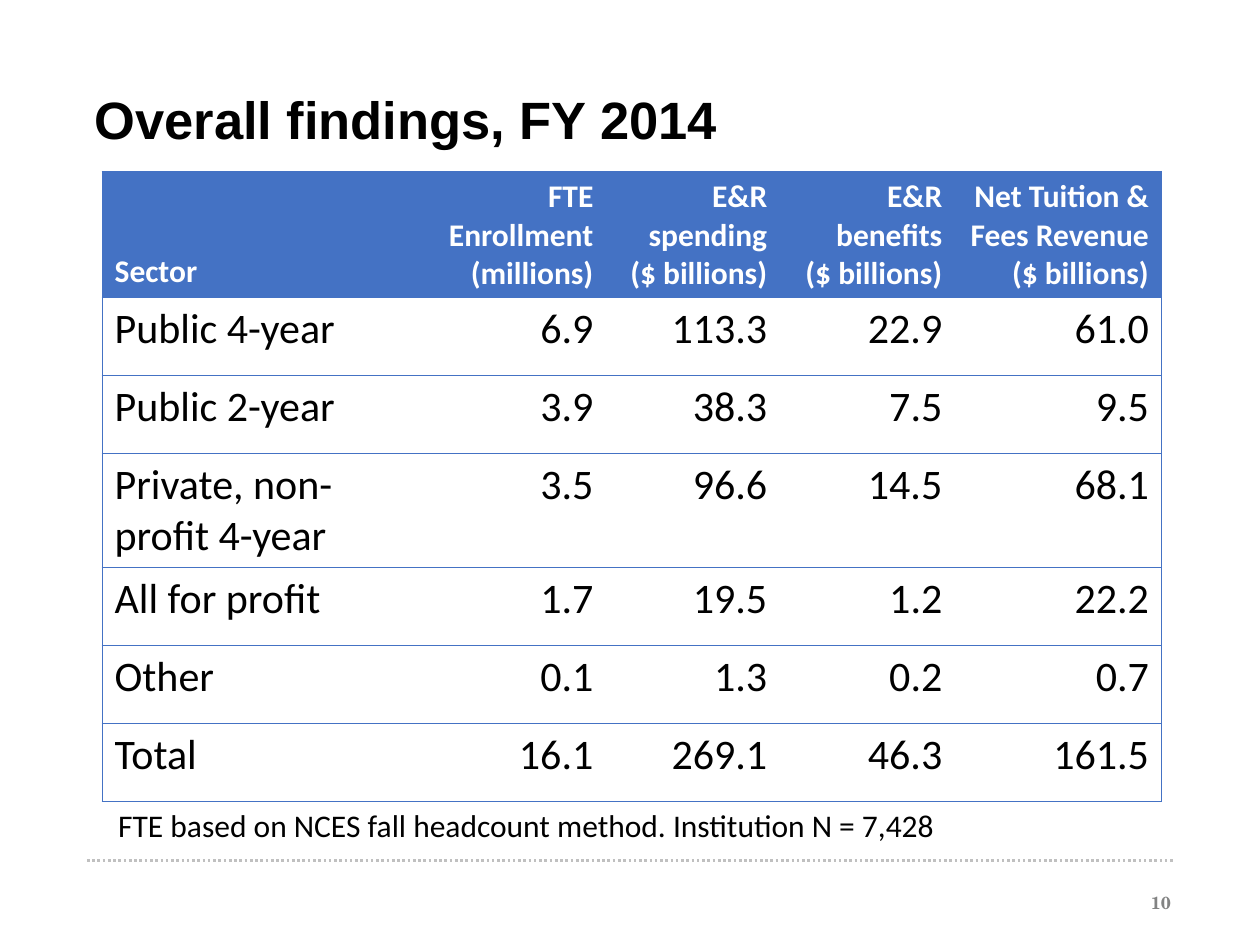
from lxml.etree import SubElement
from pptx import Presentation
from pptx.dml.color import RGBColor
from pptx.enum.dml import MSO_LINE_DASH_STYLE as Dash
from pptx.enum.shapes import MSO_CONNECTOR as Connector
from pptx.enum.text import MSO_ANCHOR as Anchor, MSO_AUTO_SIZE as AutoSize, PP_ALIGN as Align
from pptx.oxml import parse_xml
from pptx.oxml.ns import nsdecls, qn
from pptx.util import Inches, Pt

BLACK = RGBColor(0x00, 0x00, 0x00)
WHITE = RGBColor(0xFF, 0xFF, 0xFF)
BLUE = RGBColor(0x44, 0x72, 0xC4)
GREY = RGBColor(0x82, 0x83, 0x83)
RULE_GREY = RGBColor(0xC0, 0xC0, 0xC0)

COLUMN_WIDTHS = [2.48, 1.52, 1.38, 1.39, 1.64]
ROW_HEIGHTS = [0.99, 0.62, 0.62, 0.69, 0.62, 0.62, 0.62]
FINDINGS = [
    ["Sector", "FTE Enrollment (millions)", "E&R spending\n($ billions)",
     "E&R benefits\n($ billions)", "Net Tuition & Fees Revenue ($ billions)"],
    ["Public 4-year", "6.9", "113.3", "22.9", "61.0"],
    ["Public 2-year", "3.9", "38.3", "7.5", "9.5"],
    ["Private, non-profit 4-year", "3.5", "96.6", "14.5", "68.1"],
    ["All for profit", "1.7", "19.5", "1.2", "22.2"],
    ["Other", "0.1", "1.3", "0.2", "0.7"],
    ["Total", "16.1", "269.1", "46.3", "161.5"],
]


def inches(*lengths):
    """Convert several lengths to Inches."""
    return [Inches(length) for length in lengths]


def write(frame, text, size, color, face="Calibri", bold=False, align=Align.LEFT):
    """Write each line of text as a formatted paragraph."""
    for number, line in enumerate(text.split("\n")):
        paragraph = frame.add_paragraph() if number else frame.paragraphs[0]
        paragraph.alignment = align
        run = paragraph.add_run()
        run.text = line
        run.font.name, run.font.size, run.font.bold = face, Pt(size), bold
        run.font.color.rgb = color


def add_title(slide, text):
    """Place and fill the title placeholder."""
    title = slide.shapes.title
    title.left, title.top, title.width, title.height = inches(0.65, 0.74, 8.74, 0.9)
    frame = title.text_frame
    frame.vertical_anchor = Anchor.TOP
    frame.auto_size = AutoSize.NONE
    write(frame, text, 30, BLACK, "Arial", bold=True)
    frame.paragraphs[0].line_spacing = 0.8


def add_label(slide, box, text, size, color, wrap=True, **style):
    """Add a text box holding one label."""
    frame = slide.shapes.add_textbox(*inches(*box)).text_frame
    frame.word_wrap = wrap
    write(frame, text, size, color, **style)


def add_footer_rule(slide):
    """Draw the dotted rule above the page number."""
    rule = slide.shapes.add_connector(Connector.STRAIGHT, *inches(0.69, 6.83, 9.32, 6.83))
    rule.line.color.rgb = RULE_GREY
    rule.line.width = Pt(1.5)
    rule.line.dash_style = Dash.ROUND_DOT
    SubElement(rule.element.spPr, qn("a:effectLst"))


def set_borders(cell, visible_sides):
    """Draw the visible sides of a cell and clear the others."""
    for index, side in enumerate("LRTB"):
        paint = "<a:noFill/>"
        if side in visible_sides:
            paint = f'<a:solidFill><a:srgbClr val="{BLUE}"/></a:solidFill>'
        border = f'<a:ln{side} {nsdecls("a")} w="{Pt(0.5)}">{paint}</a:ln{side}>'
        cell._tc.get_or_add_tcPr().insert(index, parse_xml(border))


def add_findings_table(slide):
    """Add the sector table with its blue header and horizontal rules."""
    box = inches(0.81, 1.36, sum(COLUMN_WIDTHS), sum(ROW_HEIGHTS))
    table = slide.shapes.add_table(len(FINDINGS), len(COLUMN_WIDTHS), *box).table
    table.horz_banding = False
    for column, width in zip(table.columns, COLUMN_WIDTHS):
        column.width = Inches(width)
    for row, height in zip(table.rows, ROW_HEIGHTS):
        row.height = Inches(height)
    last = len(COLUMN_WIDTHS) - 1
    for r, values in enumerate(FINDINGS):
        for c, value in enumerate(values):
            cell = table.cell(r, c)
            align = Align.RIGHT if c else Align.LEFT
            if r == 0:
                cell.fill.solid()
                cell.fill.fore_color.rgb = BLUE
                cell.vertical_anchor = Anchor.BOTTOM
                write(cell.text_frame, value, 18, WHITE, bold=True, align=align)
            else:
                cell.fill.background()
                write(cell.text_frame, value, 24, BLACK, align=align)
            set_borders(cell, "TB" + {0: "L", last: "R"}.get(c, ""))


def main():
    """Build and save the findings slide."""
    deck = Presentation()
    deck.slide_width, deck.slide_height = inches(10, 7.5)
    slide = deck.slides.add_slide(deck.slide_layouts[5])
    add_footer_rule(slide)
    add_title(slide, "Overall findings, FY 2014")
    add_label(slide, (7.14, 7.03, 2.25, 0.4), "10", 10, GREY,
              face="TeX Gyre Schola", bold=True, align=Align.RIGHT)
    add_findings_table(slide)
    add_label(slide, (0.84, 6.35, 6.76, 0.4),
              "FTE based on NCES fall headcount method. Institution N = 7,428",
              18, BLACK, wrap=False)
    deck.save("out.pptx")


if __name__ == "__main__":
    main()
